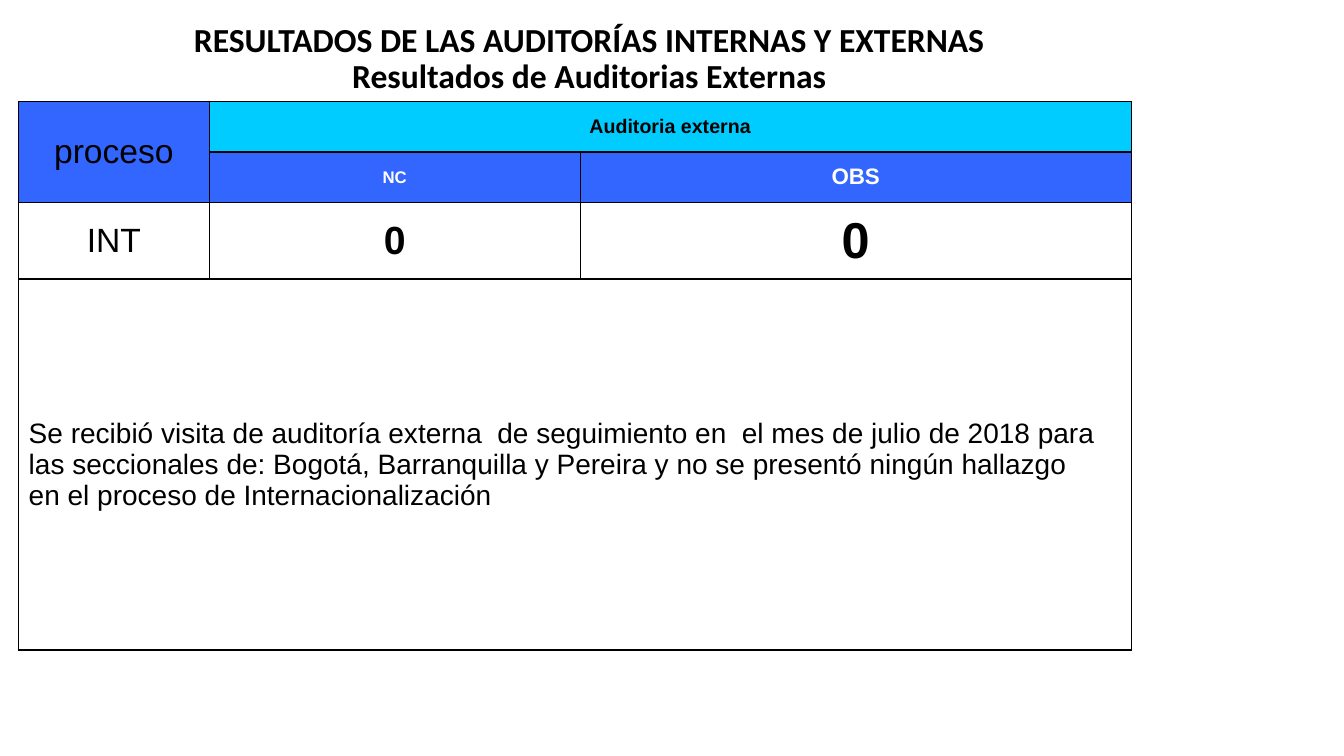
from pptx import Presentation
from pptx import util as u
from pptx.dml.color import RGBColor
from pptx.enum import text
from pptx.oxml import parse_xml
from pptx.oxml.ns import nsdecls

COLORS = {"black": "000000", "white": "FFFFFF", "blue": "3366FF", "cyan": "00CCFF"}
ALIGN = text.PP_ALIGN


class Deck:
    hanging = u.Cm(0.95)

    def __init__(self, width, height):
        self.prs = Presentation()
        self.prs.slide_width, self.prs.slide_height = u.Cm(width), u.Cm(height)
        self.s = self.prs.slides.add_slide(self.prs.slide_layouts[6])

    def run(self, p, content, size, bold=False, color="black", font="Arial"):
        r = p.add_run()
        r.text = content
        r.font.name, r.font.size, r.font.bold = font, u.Pt(size), bold
        r.font.color.rgb = RGBColor.from_string(COLORS[color])

    def title(self, lines, left, top, width, height):
        sp = self.s.shapes.add_textbox(*map(u.Cm, (left, top, width, height)))
        tf = sp.text_frame
        tf.word_wrap = True
        tf.vertical_anchor = text.MSO_ANCHOR.BOTTOM
        p = tf.paragraphs[0]
        p.alignment, p.line_spacing = ALIGN.CENTER, 0.9
        for i, line in enumerate(lines):
            if i:
                p.add_line_break()
            self.run(p, line, 24, bold=True, font="Calibri")

    def table(self, left, top, cols, rows):
        frame = self.s.shapes.add_table(
            len(rows), len(cols), *map(u.Cm, (left, top, sum(cols), sum(rows))))
        tbl = frame.table
        tbl.first_row = tbl.horz_banding = False
        for col, width in zip(tbl.columns, cols):
            col.width = u.Cm(width)
        for row, height in zip(tbl.rows, rows):
            row.height = u.Cm(height)
        for cell in tbl.iter_cells():
            self.borders(cell)
            cell.fill.background()
        return tbl

    def borders(self, cell):
        tcPr = cell._tc.get_or_add_tcPr()
        for side in "LRTB":
            tcPr.append(parse_xml(
                f'<a:ln{side} {nsdecls("a")} w="12700"><a:solidFill>'
                f'<a:srgbClr val="{COLORS["black"]}"/></a:solidFill></a:ln{side}>'))

    def cell(self, cell, lines, size, bold=False, color="black", fill=None,
             align=ALIGN.CENTER):
        cell.vertical_anchor = text.MSO_ANCHOR.MIDDLE
        if fill:
            cell.fill.solid()
            cell.fill.fore_color.rgb = RGBColor.from_string(COLORS[fill])
        tf = cell.text_frame
        for i, line in enumerate(lines):
            p = tf.add_paragraph() if i else tf.paragraphs[0]
            p.alignment = align
            pPr = p._p.get_or_add_pPr()
            pPr.set("marL", str(self.hanging))
            pPr.set("indent", str(-self.hanging))
            self.run(p, line, size, bold, color)


def main():
    d = Deck(33.87, 19.05)
    d.title(["RESULTADOS DE LAS AUDITORÍAS INTERNAS Y EXTERNAS",
             "Resultados de Auditorias Externas"], 1.5, 0, 26.7, 2.54)

    tbl = d.table(0.47, 2.56, [4.8, 9.35, 13.89], [1.27, 1.21, 1.93, 9.35])
    tbl.cell(0, 0).merge(tbl.cell(1, 0))
    tbl.cell(0, 1).merge(tbl.cell(0, 2))
    tbl.cell(3, 0).merge(tbl.cell(3, 2))

    d.cell(tbl.cell(0, 0), ["proceso"], 24, fill="blue")
    d.cell(tbl.cell(0, 1), ["Auditoria externa"], 14, True, fill="cyan")
    d.cell(tbl.cell(1, 1), ["NC"], 12, True, "white", "blue")
    d.cell(tbl.cell(1, 2), ["OBS"], 16, True, "white", "blue")
    d.cell(tbl.cell(2, 0), ["INT"], 24)
    d.cell(tbl.cell(2, 1), ["0"], 28, True)
    d.cell(tbl.cell(2, 2), ["0"], 36, True)
    d.cell(tbl.cell(3, 0), [
        "Se recibió visita de auditoría externa  de seguimiento en  el mes de julio de 2018 para",
        "las seccionales de: Bogotá, Barranquilla y Pereira y no se presentó ningún hallazgo ",
        "en el proceso de Internacionalización",
    ], 20, align=ALIGN.JUSTIFY)
    d.prs.save("out.pptx")


if __name__ == "__main__":
    main()
